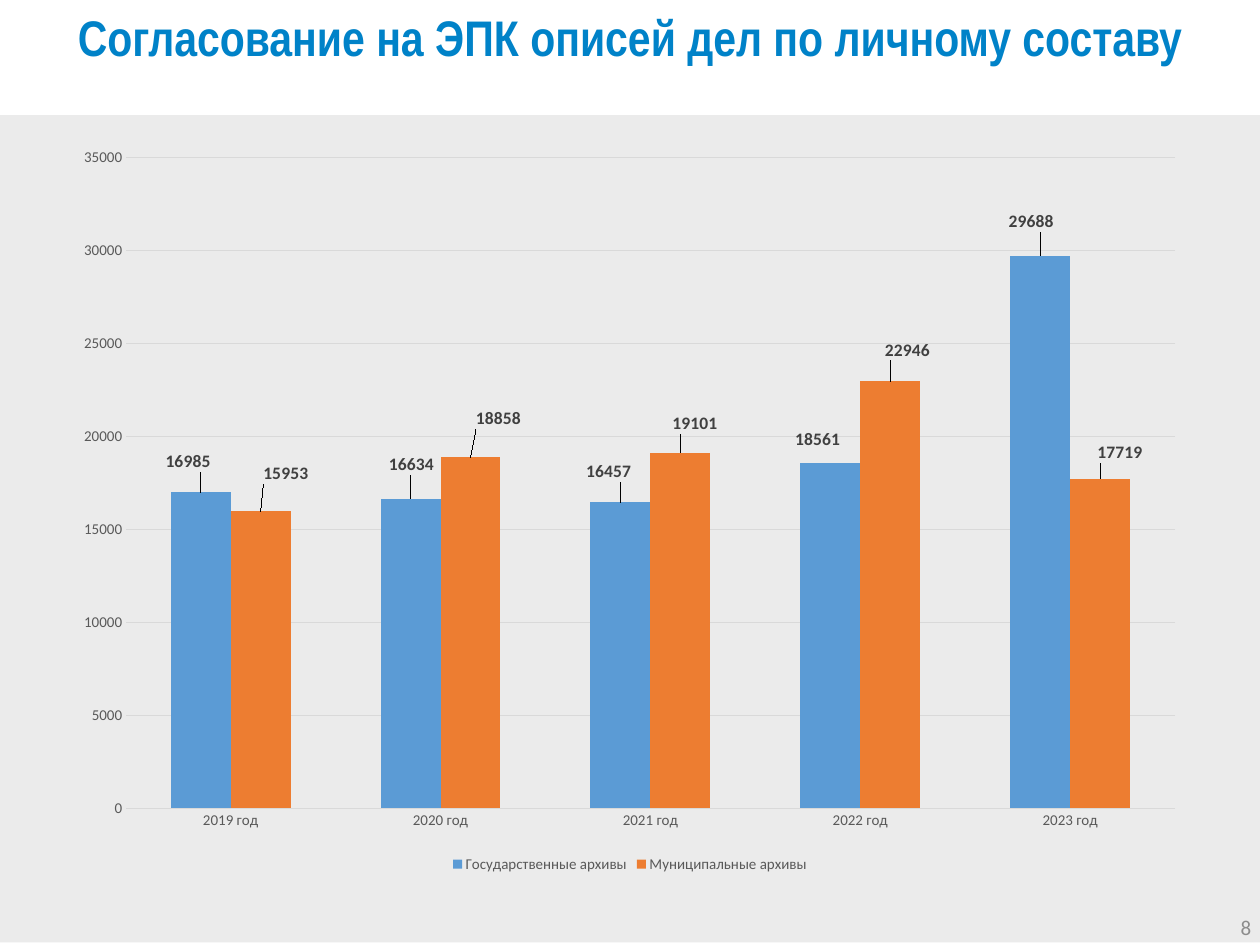
from pptx import Presentation
from pptx.chart.data import CategoryChartData
from pptx.dml.color import RGBColor
from pptx.enum.chart import XL_CHART_TYPE, XL_LABEL_POSITION, XL_LEGEND_POSITION, XL_TICK_MARK
from pptx.enum.shapes import MSO_SHAPE
from pptx.enum.text import MSO_ANCHOR, MSO_AUTO_SIZE, PP_ALIGN
from pptx.oxml import parse_xml
from pptx.oxml.ns import nsdecls, qn
from pptx.util import Inches, Pt

COLUMNS = XL_CHART_TYPE.COLUMN_CLUSTERED
OUTSIDE = XL_LABEL_POSITION.OUTSIDE_END
BOTTOM = XL_LEGEND_POSITION.BOTTOM
NO_TICK = XL_TICK_MARK.NONE
RECT = MSO_SHAPE.RECTANGLE
TOP, MIDDLE = MSO_ANCHOR.TOP, MSO_ANCHOR.MIDDLE
NO_FIT = MSO_AUTO_SIZE.NONE
CENTER, RIGHT = PP_ALIGN.CENTER, PP_ALIGN.RIGHT

WHITE = RGBColor(0xFF, 0xFF, 0xFF)
PANEL = RGBColor(0xEB, 0xEB, 0xEB)
TITLE_BLUE = RGBColor(0x00, 0x82, 0xC8)
NUMBER_GRAY = RGBColor(0x8C, 0x8C, 0x8C)
AXIS_GRAY = RGBColor(0x59, 0x59, 0x59)
LABEL_GRAY = RGBColor(0x40, 0x40, 0x40)
GRID_GRAY = RGBColor(0xD9, 0xD9, 0xD9)
BLUE = RGBColor(0x5B, 0x9B, 0xD5)
ORANGE = RGBColor(0xED, 0x7D, 0x31)

TITLE_FONT = dict(name="Arial Narrow", size=Pt(40), bold=True, color=TITLE_BLUE)
NUMBER_FONT = dict(name="Calibri", size=Pt(16.8), color=NUMBER_GRAY)
AXIS_FONT = dict(name="Calibri", size=Pt(12), bold=False, color=AXIS_GRAY)
LABEL_FONT = dict(name="Calibri", size=Pt(14), bold=True, color=LABEL_GRAY)

YEARS = [f"{year} год" for year in range(2019, 2024)]
PLOT_AREA = dict(layoutTarget="inner", xMode="edge", yMode="edge",
                 x=0.056, y=0.031, w=0.924, h=0.877)
# name, colour, values, label shifts in inches
SERIES = [
    ("Государственные архивы", BLUE, (16985, 16634, 16457, 18561, 29688),
     ((-0.14, -0.18), (0.01, -0.22), (-0.13, -0.18), (-0.14, -0.1), (-0.1, -0.22))),
    ("Муниципальные архивы", ORANGE, (15953, 18858, 19101, 22946, 17719),
     ((0.28, -0.26), (0.31, -0.27), (0.16, -0.17), (0.19, -0.19), (0.22, -0.13))),
]


def set_font(font, color, **values):
    for name, value in values.items():
        setattr(font, name, value)
    font.color.rgb = color


def add_band(s, box, fill):
    sp = s.shapes.add_shape(RECT, *map(Inches, box))
    sp.shadow.inherit = False
    sp.fill.solid()
    sp.fill.fore_color.rgb = fill
    sp.line.fill.background()


def fill_text(sp, box, text, font, align, anchor):
    sp.left, sp.top, sp.width, sp.height = map(Inches, box)
    tf = sp.text_frame
    tf.word_wrap = True
    tf.auto_size = NO_FIT
    tf.vertical_anchor = anchor
    p = tf.paragraphs[0]
    p.alignment = align
    r = p.add_run()
    r.text = text
    set_font(r.font, **font)


def add_header(s, box, text):
    title = s.shapes.title
    fill_text(title, box, text, TITLE_FONT, CENTER, TOP)
    title.element.getparent().append(title.element)


def add_number(s, box, text):
    sp = s.shapes.add_textbox(0, 0, 0, 0)
    fill_text(sp, box, text, NUMBER_FONT, RIGHT, MIDDLE)


def make_layout(values):
    items = "".join(f'<c:{k} val="{v}"/>' for k, v in values.items())
    return parse_xml(f'<c:layout {nsdecls("c")}><c:manualLayout>{items}'
                     '</c:manualLayout></c:layout>')


def format_series(series, color, shifts, width, height):
    series.format.fill.solid()
    series.format.fill.fore_color.rgb = color
    series.invert_if_negative = False
    labels = series.data_labels
    labels.show_value = True
    labels.position = OUTSIDE
    set_font(labels.font, **LABEL_FONT)
    for i, (dx, dy) in enumerate(shifts):
        label = series.points[i].data_label
        label.position = OUTSIDE
        set_font(label.font, **LABEL_FONT)
        shift = dict(x=round(dx / width, 4), y=round(dy / height, 4))
        idx = series._element.xpath(f'c:dLbls/c:dLbl/c:idx[@val="{i}"]')[0]
        idx.addnext(make_layout(shift))


def add_archive_chart(s, box):
    data = CategoryChartData()
    data.categories = YEARS
    for name, _, values, _ in SERIES:
        data.add_series(name, values)
    chart = s.shapes.add_chart(COLUMNS, *map(Inches, box), data).chart
    chart.has_title = False
    set_font(chart.font, **AXIS_FONT)
    chart.has_legend = True
    chart.legend.position = BOTTOM
    chart.legend.include_in_layout = False
    set_font(chart.legend.font, **AXIS_FONT)
    for axis in (chart.category_axis, chart.value_axis):
        axis.major_tick_mark = axis.minor_tick_mark = NO_TICK
        set_font(axis.tick_labels.font, **AXIS_FONT)
        axis.format.line.fill.background()
    axis = chart.value_axis
    axis.minimum_scale, axis.maximum_scale, axis.major_unit = 0, 35000, 5000
    grid = axis.major_gridlines.format.line
    grid.color.rgb = GRID_GRAY
    grid.width = Pt(0.75)

    plot = chart.plots[0]
    plot.gap_width = 150
    plot.overlap = 0
    plot.vary_by_categories = False
    for series, (_, color, _, shifts) in zip(plot.series, SERIES):
        format_series(series, color, shifts, *box[2:])
    area = plot._element.getparent()
    for old in area.findall(qn("c:layout")):
        area.remove(old)
    area.insert(0, make_layout(PLOT_AREA))


def main():
    prs = Presentation()
    prs.slide_width, prs.slide_height = Inches(14), Inches(10.5)
    s = prs.slides.add_slide(prs.slide_layouts[5])
    add_band(s, (0, 0, 14, 1), WHITE)
    add_band(s, (0, 1.28, 14, 9.19), PANEL)
    add_header(s, (0, 0.02, 14, 0.77), "Согласование на ЭПК описей дел по личному составу")
    add_number(s, (10.85, 10.02, 3.15, 0.56), "8")
    add_archive_chart(s, (0.69, 1.49, 12.62, 8.25))
    prs.save("out.pptx")


if __name__ == "__main__":
    main()
